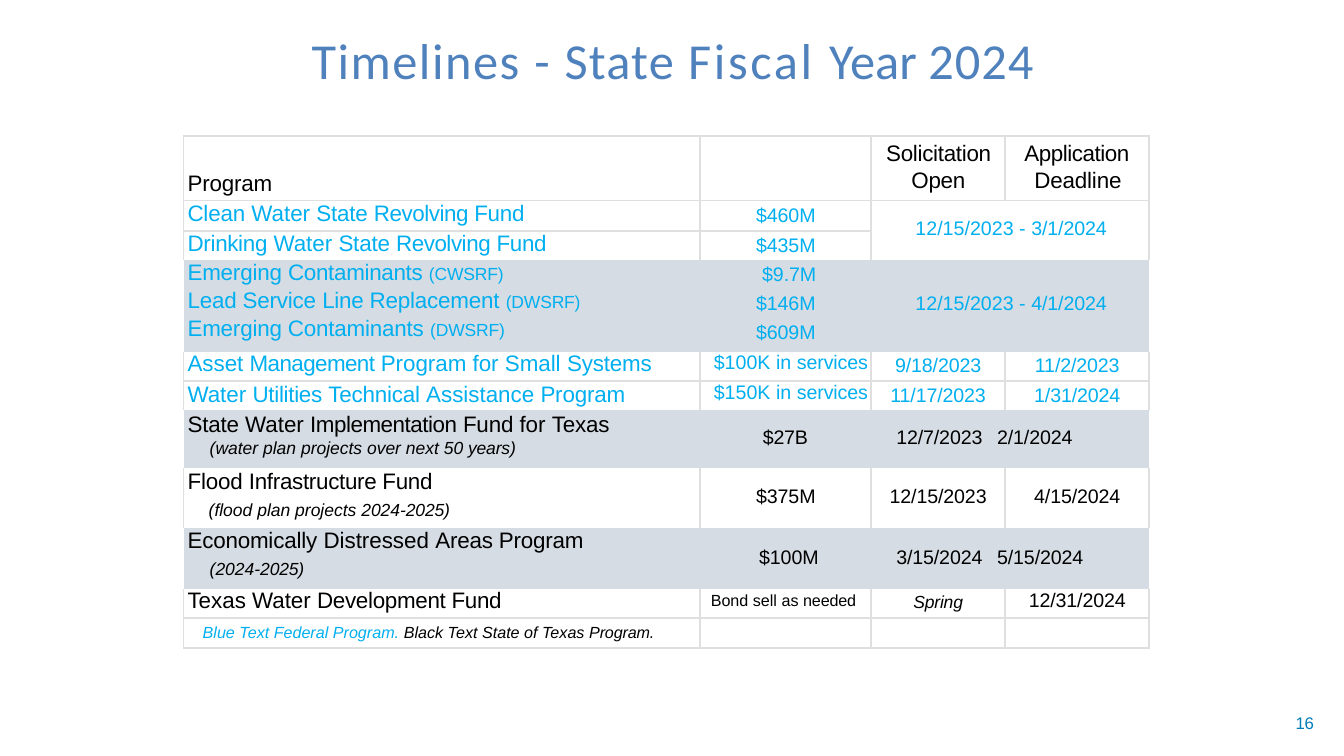
from dataclasses import dataclass

from lxml import etree
from pptx import Presentation
from pptx.dml.color import RGBColor
from pptx.enum.text import MSO_ANCHOR, MSO_AUTO_SIZE, PP_ALIGN
from pptx.oxml.ns import qn
from pptx.util import Inches, Pt

LEFT, CENTER = PP_ALIGN.LEFT, PP_ALIGN.CENTER
TOP = MSO_ANCHOR.TOP
NO_AUTOFIT = MSO_AUTO_SIZE.NONE
TITLE_ONLY = 5


@dataclass(frozen=True)
class Theme:
    title_font: str = "Calibri"
    body_font: str = "Arial"
    title: str = "4F81BC"
    number: str = "007CB8"
    federal: str = "00AFEF"
    state: str = "000000"
    band: str = "D5DCE3"
    grid: str = "DFDFDF"
    title_size: float = 36
    program_size: float = 16
    value_size: float = 14
    note_size: float = 12.5
    number_size: float = 12
    small_size: float = 11.5
    grid_width: float = 1.5


THEME = Theme()


@dataclass
class Line:
    """One paragraph; each run is (text, letter spacing in points[, size[, colour]])."""
    runs: list
    size: float = THEME.value_size
    color: str = THEME.state
    indent: float = 0
    hanging: float = 0
    before: float = 0
    spacing: object = None
    align: object = LEFT
    italic: bool = False
    tab: float = 0
    font: str = THEME.body_font


@dataclass
class Entry:
    """Content of a table cell: its top inset, its lines and its span."""
    top: float
    lines: list
    rows: int = 1
    cols: int = 1


def program(top, *runs, color=THEME.state, note=None):
    lines = [Line(list(runs), THEME.program_size, color, 0.04)]
    return Entry(top, lines + ([note] if note else []))


def federal(top, *runs):
    return program(top, *runs, color=THEME.federal)


def note(before, indent, *runs):
    return Line(list(runs), THEME.note_size, indent=indent, before=before, italic=True)


def value(top, *runs, indent=0.56, color=THEME.state, size=THEME.value_size, tab=0):
    return Entry(top, [Line(list(runs), size, color, indent, tab=tab)])


def date(top, text, spacing=-0.1, color=THEME.state, size=THEME.value_size, italic=False):
    return Entry(top, [Line([(text, spacing)], size, color, align=CENTER, italic=italic)])


def heading(indent, hanging, *runs):
    return Entry(0.04, [Line(list(runs), THEME.program_size, indent=indent,
                             hanging=hanging, spacing=1.06)])


def period(top, deadline, rows):
    line = Line([("12/15/2023 - ", 0), (deadline, -0.1)], color=THEME.federal, indent=0.44)
    return Entry(top, [line], rows, 2)


def date_pair(top, text, tab):
    pair = value(top, (text, -0.1), indent=0.25, tab=tab)
    pair.cols = 2
    return pair


def special_program(before, *runs):
    return Line(list(runs), THEME.program_size, THEME.federal, 0.04, before=before)


def amount(text, indent=0.56, before=0):
    return Line([(text, -0.1)], color=THEME.federal, indent=indent, before=before)


REVOLVING = [("Water ", 0), ("State ", -0.1), ("Revolving ", -0.3), ("Fund", -0.2)]
DWSRF = ("(DWSRF)", -0.1, THEME.note_size)
BLUE = THEME.federal
COLUMN_WIDTHS = [5.12, 1.7, 1.33, 1.43]

# Row height, banded or not, entries by column
ROWS = [
    (0.64, False, {0: program(0.35, ("Program", -0.1)),
                   2: heading(0.4, -0.25, ("Solicitation Open", -0.2)),
                   3: heading(0.29, -0.1, ("Application ", -0.3), ("Deadline", -0.1))}),
    (0.3, False, {0: federal(0.01, ("Clean ", -0.1), *REVOLVING),
                  1: value(0.04, ("$460M", -0.1), color=BLUE),
                  2: period(0.17, "3/1/2024", 2)}),
    (0.29, False, {0: federal(0.01, ("Drinking ", -0.2), *REVOLVING),
                   1: value(0.04, ("$435M", -0.1), color=BLUE)}),
    (0.91, True, {
        0: Entry(0, [
            special_program(0, ("Emerging ", -0.1), ("Contaminants ", -0.2),
                            ("(CWSRF)", -0.1, THEME.note_size)),
            special_program(2.3, ("Lead Service ", -0.1), ("Line ", -0.2),
                            ("Replacement ", -0.1), DWSRF),
            special_program(2.3, ("Emerging Contaminants ", -0.1), DWSRF)]),
        1: Entry(0.04, [amount("$9.7M", 0.62), amount("$146M", before=4.7),
                        amount("$609M", before=4.7)]),
        2: period(0.32, "4/1/2024", 1)}),
    (0.29, False, {0: federal(0, ("Asset ", 0), ("Management ", -0.4),
                              ("Program for Small ", 0), ("Systems", -0.1)),
                   1: value(0, ("$100K in ", 0), ("services", -0.1), indent=0.14, color=BLUE),
                   2: date(0.03, "9/18/2023", color=BLUE),
                   3: date(0.03, "11/2/2023", color=BLUE)}),
    (0.29, False, {0: federal(0.01, ("Water ", 0), ("Utilities ", -0.2), ("Technical ", -0.1),
                              ("Assistance ", 0), ("Program", -0.1)),
                   1: value(0.01, ("$150K in ", 0), ("services", -0.1), indent=0.14, color=BLUE),
                   2: date(0.04, "11/17/2023", color=BLUE),
                   3: date(0.04, "1/31/2024", color=BLUE)}),
    (0.57, True, {0: program(0.02, ("State ", -0.1), ("Water ", 0), ("Implementation ", -0.3),
                             ("Fund ", -0.1), ("for ", 0), ("Texas", -0.1),
                             note=note(1.5, 0.26, ("(water plan projects over next 50 ", 0),
                                       ("years)", -0.1))),
                  1: date(0.16, "$27B", -0.2),
                  2: date_pair(0.16, "12/7/2023\t2/1/2024", 1.68)}),
    (0.6, False, {0: program(0.02, ("Flood ", -0.1), ("Infrastructure Fund", -0.2),
                             note=note(4.7, 0.25, ("(flood plan projects 2024-", 0),
                                       ("2025)", -0.1))),
                  1: value(0.18, ("$375M", -0.1)),
                  2: date(0.18, "12/15/2023"),
                  3: date(0.18, "4/15/2024")}),
    (0.6, True, {0: program(0, ("Economically ", -0.1), ("Distressed ", 0),
                            ("Areas Program", -0.1),
                            note=note(4.8, 0.26, ("(2024-", 0), ("2025)", -0.1))),
                 1: value(0.18, ("$100M", -0.1), indent=0.59),
                 2: date_pair(0.18, "3/15/2024\t5/15/2024", 1.62)}),
    (0.29, False, {0: program(0, ("Texas Water ", 0), ("Development Fund", -0.2)),
                   1: value(0.03, ("Bond sell as ", 0), ("needed", -0.1), indent=0.11,
                            size=THEME.small_size),
                   2: date(0.04, "Spring", size=THEME.note_size, italic=True),
                   3: date(0.01, "12/31/2024")}),
    (0.3, False, {0: Entry(0.06, [Line(
        [("Blue Text Federal Program. ", 0, THEME.small_size, BLUE),
         ("Black Text State of Texas ", 0), ("Program.", -0.1)],
        THEME.small_size, indent=0.19, italic=True)])}),
]


def write_lines(frame, lines):
    for index, line in enumerate(lines):
        paragraph = frame.add_paragraph() if index else frame.paragraphs[0]
        properties = paragraph._p.get_or_add_pPr()
        properties.set("marL", str(Inches(line.indent)))
        properties.set("indent", str(Inches(line.hanging)))
        if line.tab:
            tabs = etree.SubElement(properties, qn("a:tabLst"))
            etree.SubElement(tabs, qn("a:tab"), pos=str(Inches(line.tab)), algn="l")
        paragraph.alignment = line.align
        if index:
            paragraph.space_before = Pt(line.before)
        if line.spacing:
            paragraph.line_spacing = line.spacing
        for text, spacing, *style in line.runs:
            run = paragraph.add_run()
            run.text = text
            run.font.name = line.font
            run.font.size = Pt(style[0] if style else line.size)
            run.font.italic = line.italic
            run.font.color.rgb = RGBColor.from_string(style[1] if len(style) > 1 else line.color)
            run._r.get_or_add_rPr().set("spc", str(round(spacing * 100)))


def set_insets(box, top):
    box.margin_left = box.margin_right = box.margin_bottom = 0
    box.margin_top = Inches(top)
    box.vertical_anchor = TOP


def draw_borders(cell, sides):
    properties = cell._tc.get_or_add_tcPr()
    for side in "LRTB":
        border = etree.SubElement(properties, qn(f"a:ln{side}"), w=str(Pt(THEME.grid_width)))
        if side in sides:
            fill = etree.SubElement(border, qn("a:solidFill"))
            etree.SubElement(fill, qn("a:srgbClr"), val=THEME.grid)
        else:
            etree.SubElement(border, qn("a:noFill"))


def grid_sides(first, last):
    """Banded rows have no borders, nor do the edges that touch them."""
    if ROWS[first][1]:
        return ""
    above = "" if first and ROWS[first - 1][1] else "T"
    below = "" if last + 1 < len(ROWS) and ROWS[last + 1][1] else "B"
    return "LR" + above + below


def add_timeline(slide):
    height = sum(row[0] for row in ROWS)
    frame = slide.shapes.add_table(len(ROWS), len(COLUMN_WIDTHS), Inches(1.82), Inches(1.35),
                                   Inches(sum(COLUMN_WIDTHS)), Inches(height))
    table = frame.table
    table.first_row = table.horz_banding = False
    for column, width in zip(table.columns, COLUMN_WIDTHS):
        column.width = Inches(width)
    for r, (row_height, banded, entries) in enumerate(ROWS):
        table.rows[r].height = Inches(row_height)
        for c in range(len(COLUMN_WIDTHS)):
            cell = table.cell(r, c)
            entry = entries.get(c, Entry(0, []))
            set_insets(cell, entry.top)
            if entry.rows * entry.cols > 1:
                cell.merge(table.cell(r + entry.rows - 1, c + entry.cols - 1))
            if entry.lines:
                write_lines(cell.text_frame, entry.lines)
            else:
                etree.SubElement(cell.text_frame.paragraphs[0]._p, qn("a:endParaRPr"), sz="1200")
            draw_borders(cell, "" if cell.is_spanned else grid_sides(r, r + entry.rows - 1))
            if banded:
                cell.fill.solid()
                cell.fill.fore_color.rgb = RGBColor.from_string(THEME.band)
            else:
                cell.fill.background()


def place_text(box, left, top, width, height, inset, line):
    box.left, box.top = Inches(left), Inches(top)
    box.width, box.height = Inches(width), Inches(height)
    frame = box.text_frame
    frame.word_wrap = True
    frame.auto_size = NO_AUTOFIT
    set_insets(frame, inset)
    write_lines(frame, [line])


def main():
    deck = Presentation()
    deck.slide_width, deck.slide_height = Inches(13.33), Inches(7.5)
    slide = deck.slides.add_slide(deck.slide_layouts[TITLE_ONLY])
    title = Line([("Timelines ", 1.1), ("- ", 1.2), ("State ", 0.9), ("Fiscal ", 1.9),
                  ("Year ", 0), ("2024", 0.7)],
                 THEME.title_size, THEME.title, 1.46, font=THEME.title_font)
    place_text(slide.shapes.title, 1.63, 0.18, 10.08, 0.91, 0.11, title)
    page = Line([("16", -0.2)], THEME.number_size, THEME.number, 0.04, spacing=Pt(14.2))
    page_box = slide.shapes.add_textbox(0, 0, 0, 0)
    place_text(page_box, 12.81, 7.07, 0.38, 0.21, 0, page)
    add_timeline(slide)
    deck.save("out.pptx")


if __name__ == "__main__":
    main()
